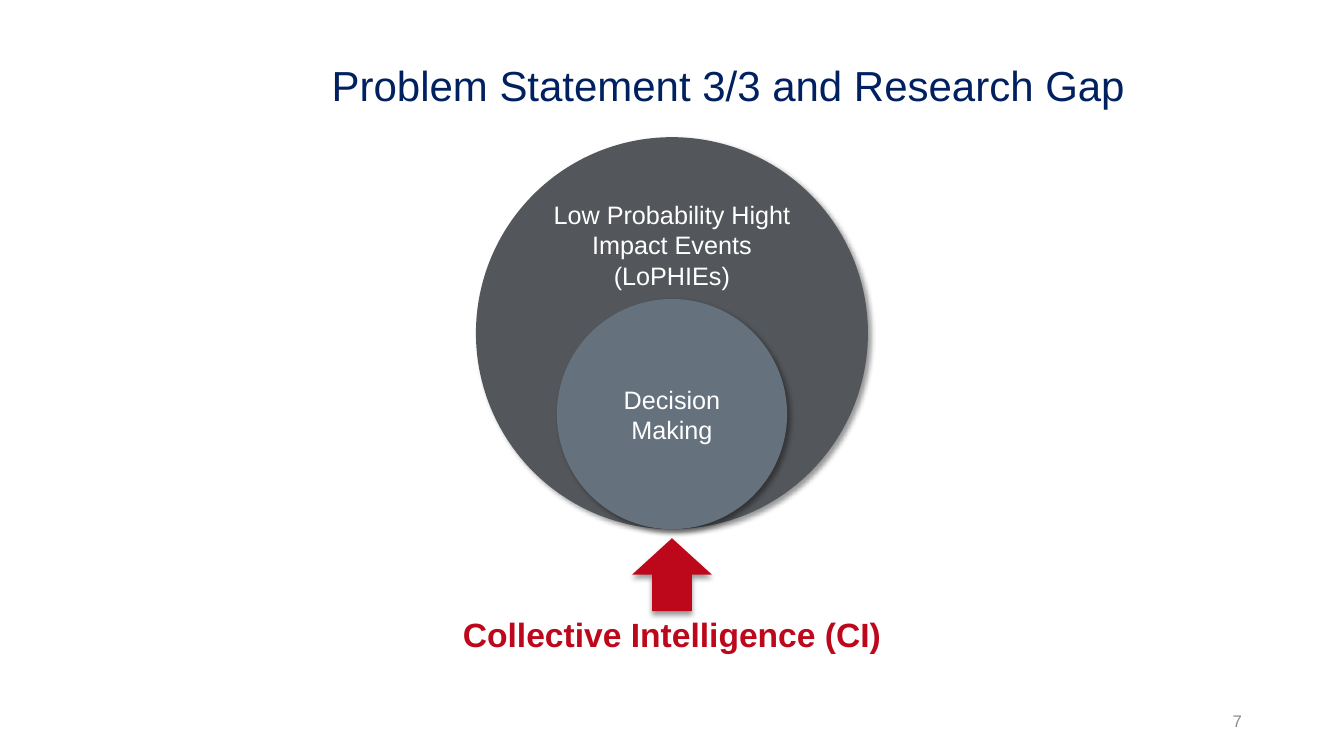
from lxml import etree
from pptx import Presentation
from pptx.dml.color import RGBColor
from pptx.enum import shapes, text
from pptx.oxml import ns
from pptx.util import Pt

SLIDE_W, SLIDE_H = 960, 540
FONT = "Arial"
RED, WHITE = "BD081C", "FFFFFF"
CENTER_X = 480
CIRCLE_BOTTOM = 378

TITLE = ("Problem Statement 3/3 and Research Gap", 30, "002060")
CIRCLES = [
    ("Low Probability Hight Impact Events (LoPHIEs)", 280, "53565A", text.MSO_ANCHOR.TOP),
    ("Decision Making", 164.4, "65717D", text.MSO_ANCHOR.MIDDLE),
]
ARROW = (384.5, 57, 52)
LABEL = ("Collective Intelligence (CI)", 24, RED)
NUMBER = ("7", 12, "8C8C8C")


def color(value):
    return RGBColor.from_string(value)


def write(s, content, align, anchor, bold=False):
    words, size, fill = content
    tf = s.text_frame
    tf.word_wrap = True
    tf.auto_size = text.MSO_AUTO_SIZE.NONE
    tf.vertical_anchor = anchor
    tf.text = words
    p = tf.paragraphs[0]
    p.alignment = align
    r = p.runs[0]
    r.font.name = FONT
    r.font.size = Pt(size)
    r.font.bold = bold
    r.font.color.rgb = color(fill)
    return p


def add_shadowed(kind, top, width, height, fill, angle):
    s = slide.shapes.add_shape(kind, Pt(CENTER_X - width / 2), Pt(top), Pt(width), Pt(height))
    s.fill.solid()
    s.fill.fore_color.rgb = color(fill)
    s.line.fill.background()
    s.shadow.inherit = False
    effects = s._element.spPr.find(ns.qn("a:effectLst"))
    shadow = etree.SubElement(effects, ns.qn("a:outerShdw"), blurRad=str(Pt(4)),
                              dist=str(Pt(3)), dir=str(angle * 60000),
                              algn="tl", rotWithShape="0")
    tint = etree.SubElement(shadow, ns.qn("a:srgbClr"), val="000000")
    etree.SubElement(tint, ns.qn("a:alpha"), val="40000")
    return s


prs = Presentation()
prs.slide_width, prs.slide_height = Pt(SLIDE_W), Pt(SLIDE_H)
slide = prs.slides.add_slide(prs.slide_layouts[5])

title = slide.shapes.title
title.left, title.top, title.width, title.height = Pt(229.7), Pt(10.8), Pt(730), Pt(104.4)
p = write(title, TITLE, text.PP_ALIGN.LEFT, text.MSO_ANCHOR.MIDDLE)
p.line_spacing = 0.9

for words, size, fill, anchor in CIRCLES:
    s = add_shadowed(shapes.MSO_SHAPE.OVAL, CIRCLE_BOTTOM - size, size, size, fill, 45)
    write(s, (words, 18, WHITE), text.PP_ALIGN.CENTER, anchor)

add_shadowed(shapes.MSO_SHAPE.UP_ARROW, *ARROW, RED, 90)

label = slide.shapes.add_textbox(Pt(CENTER_X - 178), Pt(435), Pt(356), Pt(36))
write(label, LABEL, text.PP_ALIGN.CENTER, text.MSO_ANCHOR.TOP, True)

number = slide.shapes.add_textbox(Pt(818.6), Pt(500.4), Pt(75.6), Pt(28.8))
write(number, NUMBER, text.PP_ALIGN.RIGHT, text.MSO_ANCHOR.MIDDLE)

prs.save("out.pptx")
